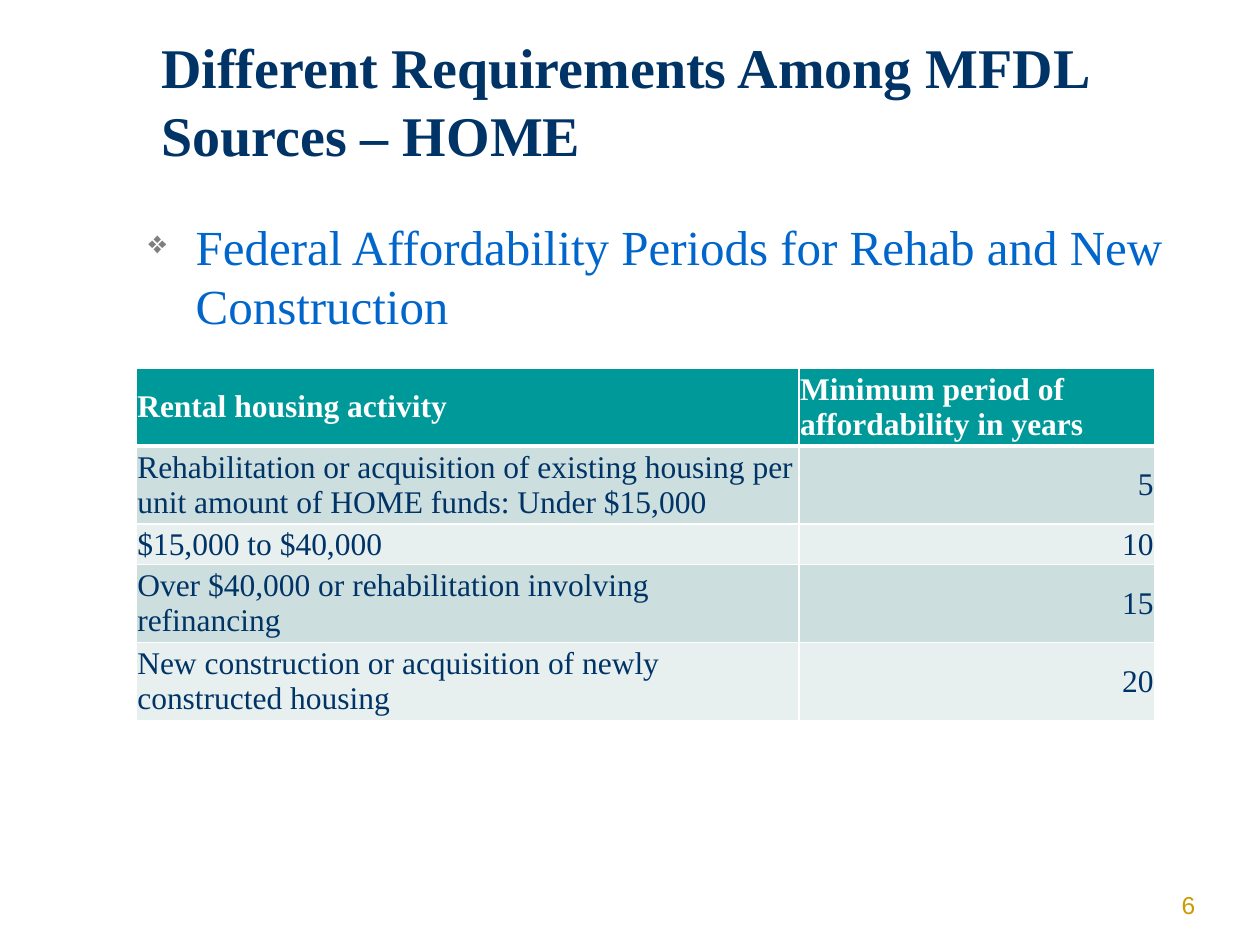
from dataclasses import dataclass
from typing import Any

from lxml.etree import SubElement
from pptx import Presentation
from pptx.dml.color import RGBColor
from pptx.enum.text import MSO_ANCHOR as Anchor, PP_ALIGN as Align
from pptx.oxml.ns import qn
from pptx.util import Pt

NAVY, BLUE, TEAL, GOLD, GRAY, WHITE = "003366", "0066CC", "009999", "CC9900", "7F7F7F", "FFFFFF"
BANDS = ("CCDEDE", "E7EFEF")
LEFT = 77.76
HEADER = ("Rental housing activity", "Minimum period of affordability in years")
PERIODS = (
    ("Rehabilitation or acquisition of existing housing per unit amount of HOME funds: Under $15,000", "5"),
    ("$15,000 to $40,000", "10"),
    ("Over $40,000 or rehabilitation involving refinancing", "15"),
    ("New construction or acquisition of newly constructed housing", "20"),
)


def color(value):
    """Turn a hex string into a colour."""
    return RGBColor.from_string(value)


def assign(target, values):
    """Set each named attribute on the target."""
    for name, value in values.items():
        setattr(target, name, value)


@dataclass
class SlideBuilder:
    """Hold the style and the slide being built."""

    slide: Any
    face: str = "Times New Roman"

    def styled_run(self, paragraph, text, size, ink, align=Align.LEFT, bold=False, face=None):
        """Put one styled run into a paragraph."""
        paragraph.alignment = align
        run = paragraph.add_run()
        run.text = text
        assign(run.font, {"name": face or self.face, "size": Pt(size), "bold": bold})
        run.font.color.rgb = color(ink)

    def text(self, box, text, size, ink, anchor=Anchor.TOP, side=7.2, bullet=None, **style):
        """Add a wrapped text box, optionally bulleted."""
        frame = self.slide.shapes.add_textbox(*map(Pt, box)).text_frame
        assign(frame, {"word_wrap": True, "vertical_anchor": anchor,
                       "margin_left": Pt(side), "margin_right": Pt(side)})
        paragraph = frame.paragraphs[0]
        if bullet:
            self.bullet(paragraph, bullet)
        self.styled_run(paragraph, text, size, ink, **style)

    def bullet(self, paragraph, mark):
        """Give a paragraph a hanging bullet."""
        properties = paragraph._p.get_or_add_pPr()
        for name, value in {"marL": 27, "indent": -27}.items():
            properties.set(name, str(int(Pt(value))))
        tint = SubElement(properties, qn("a:buClr"))
        SubElement(tint, qn("a:srgbClr"), val=GRAY)
        SubElement(properties, qn("a:buSzPct"), val="65000")
        SubElement(properties, qn("a:buChar"), char=mark)

    def borders(self, cell, top, bottom):
        """Draw white borders around a cell."""
        properties = cell._tc.get_or_add_tcPr()
        widths = {"a:lnL": 1, "a:lnR": 1, "a:lnT": top, "a:lnB": bottom}
        for index, (tag, width) in enumerate(widths.items()):
            line = SubElement(properties, qn(tag), w=str(int(Pt(width))))
            fill = SubElement(line, qn("a:solidFill"))
            SubElement(fill, qn("a:srgbClr"), val=WHITE)
            properties.insert(index, line)

    def cell(self, cell, text, fill, **style):
        """Fill one table cell with colour and text."""
        cell.fill.solid()
        cell.fill.fore_color.rgb = color(fill)
        sides = ("left", "right", "top", "bottom")
        assign(cell, {f"margin_{side}": Pt(0.72) for side in sides})
        cell.vertical_anchor = Anchor.MIDDLE
        self.styled_run(cell.text_frame.paragraphs[0], text, 18, **style)

    def table(self, left, top, widths, heights, header, rows):
        """Add a banded table below a header row."""
        box = (left, top, sum(widths), sum(heights))
        table = self.slide.shapes.add_table(len(heights), len(widths), *map(Pt, box)).table
        for column, width in zip(table.columns, widths):
            column.width = Pt(width)
        for row, height in zip(table.rows, heights):
            row.height = Pt(height)
        for index, values in enumerate((header, *rows)):
            for column, text in enumerate(values):
                cell = table.cell(index, column)
                if index == 0:
                    self.cell(cell, text, TEAL, ink=WHITE, bold=True)
                else:
                    align = Align.RIGHT if column else Align.LEFT
                    self.cell(cell, text, BANDS[(index - 1) % 2], ink=NAVY, align=align)
                self.borders(cell, 3 if index == 1 else 1, 3 if index == 0 else 1)


def main():
    """Build and save the slide."""
    presentation = Presentation()
    assign(presentation, {"slide_width": Pt(720), "slide_height": Pt(540)})
    builder = SlideBuilder(presentation.slides.add_slide(presentation.slide_layouts[6]))
    builder.text((LEFT, 12.24, 612, 90), "Different Requirements Among MFDL Sources – HOME",
                 32, NAVY, Anchor.MIDDLE, side=14.4, bold=True)
    builder.text((LEFT, 120.24, 600, 384), "Federal Affordability Periods for Rehab and New Construction",
                 28, BLUE, bullet="❖")
    builder.text((522, 504, 168, 25.2), "6", 14, GOLD, Anchor.BOTTOM, align=Align.RIGHT, face="Arial")
    builder.table(LEFT, 210.24, (378.72, 203.4), (41.4, 41.4, 21.2, 41.4, 41.4), HEADER, PERIODS)
    presentation.save("out.pptx")


if __name__ == "__main__":
    main()
